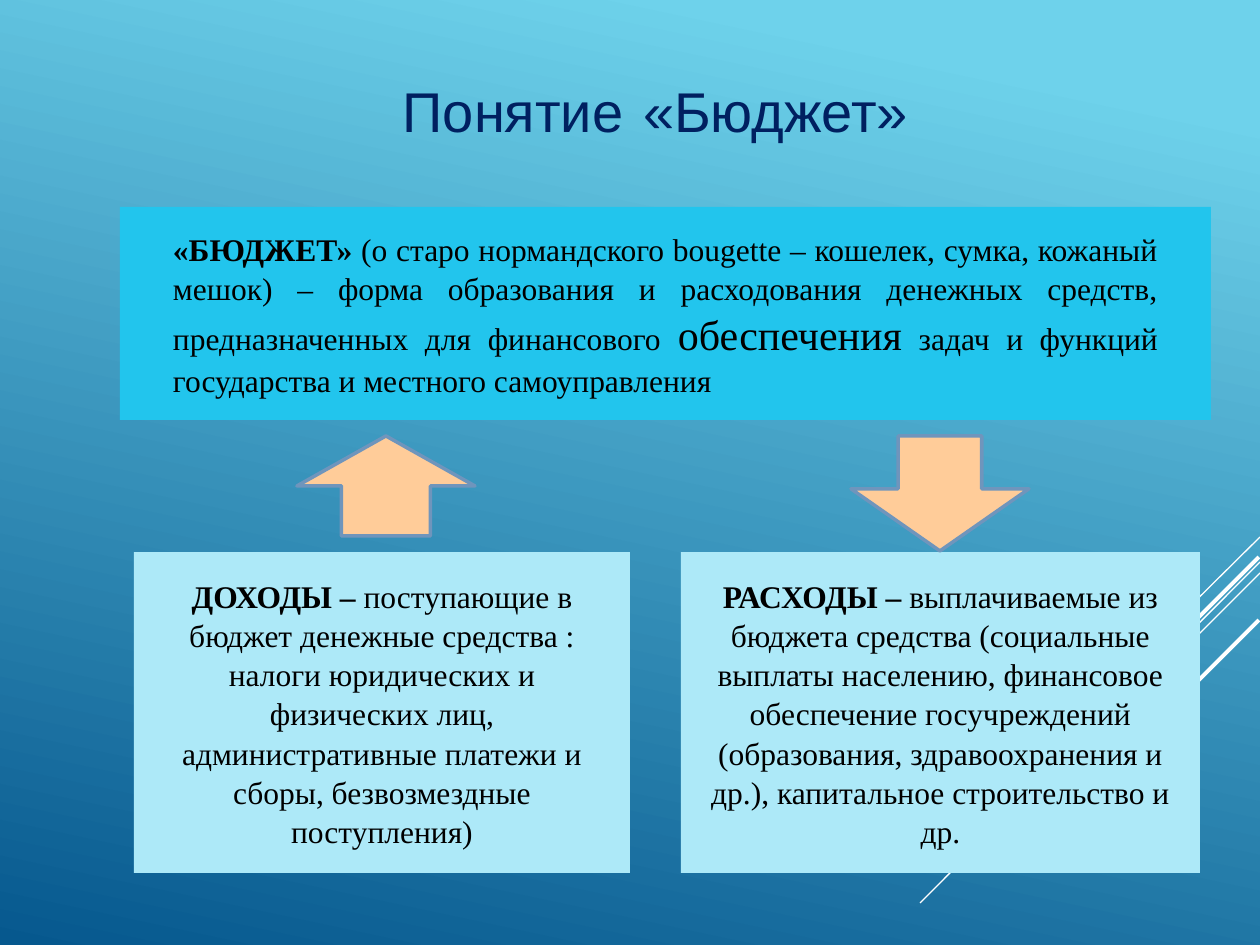
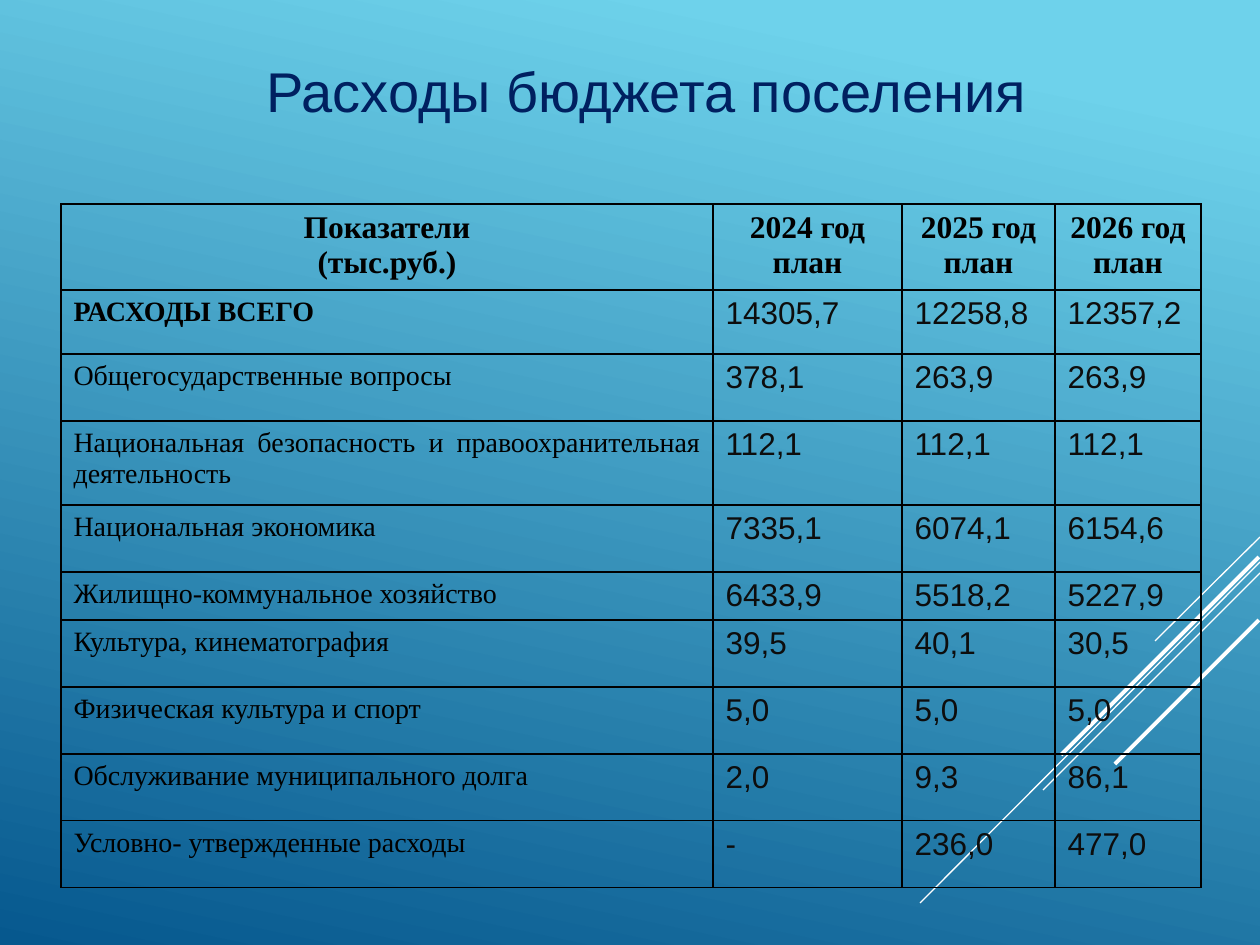
from lxml import etree
from pptx import Presentation
from pptx.dml.color import RGBColor
from pptx.enum.shapes import MSO_CONNECTOR, MSO_SHAPE
from pptx.enum.text import MSO_ANCHOR, PP_ALIGN
from pptx.oxml import parse_xml
from pptx.oxml.ns import qn
from pptx.util import Pt

LINE = MSO_CONNECTOR.STRAIGHT
RECT = MSO_SHAPE.RECTANGLE
UP = MSO_SHAPE.UP_ARROW
DOWN = MSO_SHAPE.DOWN_ARROW
MID = MSO_ANCHOR.MIDDLE
LEFT = PP_ALIGN.LEFT
CENTER = PP_ALIGN.CENTER
JUST = PP_ALIGN.JUSTIFY

SCALE = 914400 / 126
SANS = "Arial"
SERIF = "Times New Roman"
HUES = {
    "sky": "6ED2EB", "deep": "06588E", "white": "FFFFFF", "navy": "002060",
    "cyan": "22C5ED", "pale": "ADE9F8", "peach": "FFCC99", "edge": "6F95BC",
    "black": "000000", "ink": "0D0D0D",
}
NS = "http://schemas.openxmlformats.org/drawingml/2006/main"


def px(*nums):
    return [round(n * SCALE) for n in nums]


def style(font, name, size, hue, bold=False):
    font.name = name
    font.size = Pt(size)
    font.bold = bold
    font.color.rgb = RGBColor.from_string(HUES[hue])


deck = Presentation()
deck.slide_width, deck.slide_height = px(1260, 945)

back = deck.slide_master.background.fill
back.gradient()
back.gradient_angle = 258
for stop, spot, hue in zip(back.gradient_stops, (0.1, 1), ("sky", "deep")):
    stop.position = spot
    stop.color.rgb = RGBColor.from_string(HUES[hue])

rays = [
    (1260, 537, 1155, 641, 0.75),
    (1260, 562, 920, 903, 0.75),
    (1260, 573, 1043, 790, 0.75),
    (1259, 557, 1061, 755, 2.25),
    (1259, 620, 1115, 764, 2.25),
]
heads = [
    ((110, 42, 1091, 126), ["Понятие", " ", "«Бюджет»"]),
    ((76, 15, 1141, 150), ["Расходы бюджета поселения"]),
]
pages = []
for spot, words in heads:
    page = deck.slides.add_slide(deck.slide_layouts[5])
    pages.append(page)
    title = page.shapes.title
    title.left, title.top, title.width, title.height = px(*spot)
    title.text_frame.vertical_anchor = MID
    para = title.text_frame.paragraphs[0]
    para.alignment = CENTER
    style(para.font, SANS, 32, "navy")
    for word in words:
        run = para.add_run()
        run.text = word
        if word == " ":
            run.font.size = Pt(40)
    for *ends, width in rays:
        ray = page.shapes.add_connector(LINE, *px(*ends))
        ray.line.color.rgb = RGBColor.from_string(HUES["white"])
        ray.line.width = Pt(width)
        etree.SubElement(ray._element.spPr, qn("a:effectLst"))

first, second = pages

boxes = [
    ((120, 207, 1091, 213), "cyan", JUST, 53, [
        ("«БЮДЖЕТ» ", 18, True),
        ("(о старо нормандского bougette – кошелек, сумка, кожаный мешок) – "
         "форма образования и расходования денежных средств, "
         "предназначенных для финансового ", 18, False),
        ("обеспечения", 24, False),
        (" задач и функций государства и местного самоуправления", 18, False),
    ]),
    ((134, 552, 496, 321), "pale", CENTER, 29, [
        ("ДОХОДЫ – ", 18, True),
        ("поступающие в бюджет денежные средства : налоги юридических и "
         "физических лиц, административные платежи и сборы, "
         "безвозмездные поступления)", 18, False),
    ]),
    ((681, 552, 519, 321), "pale", CENTER, 29, [
        ("РАСХОДЫ – ", 18, True),
        ("выплачиваемые из бюджета средства (социальные выплаты населению, "
         "финансовое обеспечение госучреждений (образования, "
         "здравоохранения и др.), капитальное строительство и др.", 18, False),
    ]),
]
for spot, hue, side, inset, parts in boxes:
    box = first.shapes.add_shape(RECT, *px(*spot))
    box.shadow.inherit = False
    box.fill.solid()
    box.fill.fore_color.rgb = RGBColor.from_string(HUES[hue])
    box.line.fill.background()
    frame = box.text_frame
    frame.word_wrap = True
    frame.vertical_anchor = MID
    frame.margin_left, frame.margin_right = px(inset, inset)
    para = frame.paragraphs[0]
    para.alignment = side
    para.line_spacing = 1.04
    for text, size, bold in parts:
        run = para.add_run()
        run.text = text
        style(run.font, SERIF, size, "black", bold)

arrows = [
    (UP, (297, 436, 178, 100), 0.5, 0.5),
    (DOWN, (851, 436, 178, 115), 0.47, 0.54),
]
for kind, spot, stem, tip in arrows:
    arrow = first.shapes.add_shape(kind, *px(*spot))
    arrow.shadow.inherit = False
    arrow.adjustments[0] = stem
    arrow.adjustments[1] = tip
    arrow.fill.solid()
    arrow.fill.fore_color.rgb = RGBColor.from_string(HUES["peach"])
    arrow.line.color.rgb = RGBColor.from_string(HUES["edge"])
    arrow.line.width = Pt(2)

rows = [
    ("Показатели\n(тыс.руб.)", "2024 год\nплан", "2025 год\nплан", "2026 год\nплан"),
    ("РАСХОДЫ ВСЕГО", "14305,7", "12258,8", "12357,2"),
    ("Общегосударственные вопросы", "378,1", "263,9", "263,9"),
    ("Национальная безопасность и правоохранительная деятельность",
     "112,1", "112,1", "112,1"),
    ("Национальная экономика", "7335,1", "6074,1", "6154,6"),
    ("Жилищно-коммунальное хозяйство", "6433,9", "5518,2", "5227,9"),
    ("Культура, кинематография", "39,5", "40,1", "30,5"),
    ("Физическая культура и спорт", "5,0", "5,0", "5,0"),
    ("Обслуживание муниципального долга", "2,0", "9,3", "86,1"),
    ("Условно- утвержденные расходы", "-", "236,0", "477,0"),
]
wide = [652, 189, 153, 146]
tall = [86, 64, 67, 84, 67, 48, 67, 67, 67, 67]
grid = second.shapes.add_table(
    len(rows), len(wide), *px(61, 204, sum(wide), sum(tall))).table
grid.first_row = False
grid.horz_banding = False
for col, size in zip(grid.columns, px(*wide)):
    col.width = size
for row, size in zip(grid.rows, px(*tall)):
    row.height = size

for r, row in enumerate(rows):
    for c, text in enumerate(row):
        cell = grid.cell(r, c)
        cell.text = text
        for para in cell.text_frame.paragraphs:
            if r == 0:
                para.alignment = CENTER
                style(para.font, SERIF, 18, "black", True)
            elif c == 0:
                para.alignment = LEFT if r == 1 else JUST
                style(para.font, SERIF, 16, "black", r == 1)
            else:
                para.alignment = LEFT
                style(para.font, SANS, 18, "ink")
        props = cell._tc.get_or_add_tcPr()
        for edge in ("lnL", "lnR", "lnT", "lnB"):
            props.append(parse_xml(
                f'<a:{edge} xmlns:a="{NS}" w="12700"><a:solidFill>'
                f'<a:srgbClr val="{HUES["black"]}"/></a:solidFill></a:{edge}>'))
        cell.fill.background()

deck.save("out.pptx")
